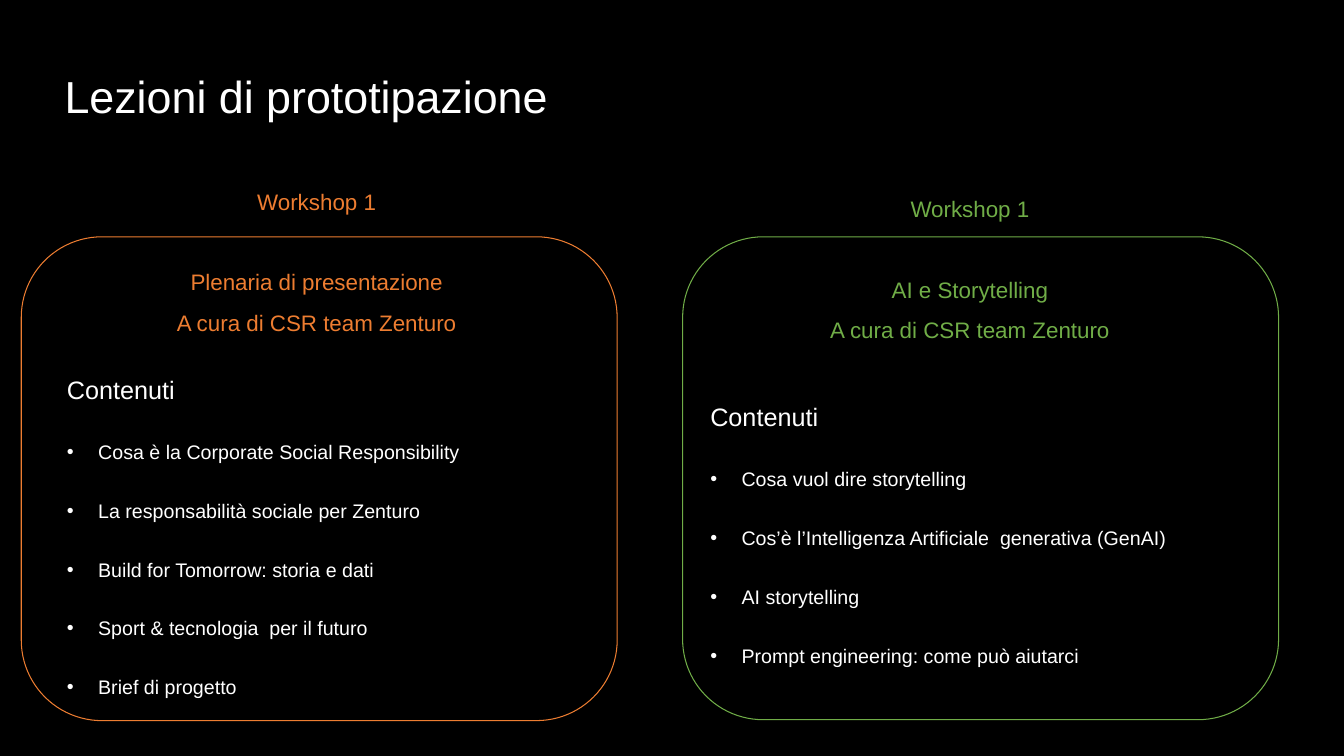
from dataclasses import dataclass

from lxml.etree import SubElement
from pptx import Presentation
from pptx.dml.color import RGBColor as RGB
from pptx.enum.shapes import MSO_SHAPE as Shp
from pptx.enum.text import MSO_ANCHOR as Anchor, MSO_AUTO_SIZE as Fit, PP_ALIGN as Al
from pptx.oxml.ns import qn
from pptx.util import Inches, Pt

BLACK = RGB(0x00, 0x00, 0x00)
WHITE = RGB(0xFF, 0xFF, 0xFF)
ORANGE = RGB(0xED, 0x7D, 0x31)
GREEN = RGB(0x70, 0xAD, 0x47)

WIDTH, HEIGHT = Inches(13.33), Inches(7.5)
FONT = "Arial"
HANGING = Inches(0.31)
HEADING = dict(alignment=Al.CENTER, line_spacing=Pt(28.8), space_before=Pt(0))
SUBHEAD = dict(HEADING, space_before=Pt(28.8))
LABEL = dict(alignment=Al.LEFT, line_spacing=Pt(32.4), space_before=Pt(0))
ITEM = dict(LABEL, line_spacing=Pt(42))
TITLE = dict(alignment=Al.LEFT, line_spacing=0.9, space_before=Pt(0))


@dataclass(frozen=True)
class Box:
    """A rectangle in percent of the slide's width and height."""
    x: float
    y: float
    w: float
    h: float


@dataclass(frozen=True)
class Workshop:
    """One framed column with its heading and contents."""
    color: RGB
    frame: Box
    head: Box
    body: Box
    topic: str
    items: tuple[str, ...]


WORKSHOPS = (
    Workshop(ORANGE, Box(1.58, 31.33, 44.34, 64), Box(9.53, 22.4, 28.06, 22.67),
             Box(4.23, 46.85, 39, 47), "Plenaria di presentazione",
             ("Cosa è la Corporate Social Responsibility",
              "La responsabilità sociale per Zenturo",
              "Build for Tomorrow: storia e dati",
              "Sport & tecnologia  per il futuro",
              "Brief di progetto")),
    Workshop(GREEN, Box(50.79, 31.33, 44.34, 63.87), Box(58.14, 23.37, 28.06, 22.67),
             Box(52.1, 50.47, 42, 43), "AI e Storytelling",
             ("Cosa vuol dire storytelling",
              "Cos’è l’Intelligenza Artificiale  generativa (GenAI)",
              "AI storytelling",
              "Prompt engineering: come può aiutarci")),
)


def place(box: Box) -> dict[str, int]:
    """Turn a box of percentages into slide lengths."""
    return dict(left=int(WIDTH * box.x / 100), top=int(HEIGHT * box.y / 100),
                width=int(WIDTH * box.w / 100), height=int(HEIGHT * box.h / 100))


def assign(obj, values: dict) -> None:
    """Set each named attribute of an object."""
    for name, value in values.items():
        setattr(obj, name, value)


def prepare(sp, box: Box, anchor=Anchor.TOP):
    """Move a placeholder and return its text frame."""
    assign(sp, place(box))
    tf = sp.text_frame
    assign(tf, dict(auto_size=Fit.NONE, word_wrap=True, vertical_anchor=anchor))
    return tf


def write(p, text: str, size: float, color: RGB, layout: dict) -> None:
    """Fill a paragraph with one formatted run."""
    assign(p, layout)
    r = p.add_run()
    r.text = text
    assign(r.font, dict(name=FONT, size=Pt(size), bold=False))
    r.font.color.rgb = color


def indent(p, bullet: bool) -> None:
    """Give a paragraph a hanging bullet or none at all."""
    pPr = p._p.get_or_add_pPr()
    pPr.set("marL", str(HANGING if bullet else 0))
    pPr.set("indent", str(-HANGING if bullet else 0))
    if not bullet:
        SubElement(pPr, qn("a:buNone"))


def draw_workshop(s, shop: Workshop, head, body) -> None:
    """Draw the frame and fill the heading and the list."""
    sp = s.shapes.add_shape(Shp.ROUNDED_RECTANGLE, **place(shop.frame))
    sp.shadow.inherit = False
    sp.fill.background()
    sp.line.color.rgb = shop.color
    sp.line.width = Pt(0.75)

    tf = prepare(head, shop.head)
    write(tf.paragraphs[0], "Workshop 1", 16, shop.color, HEADING)
    write(tf.add_paragraph(), shop.topic, 16, shop.color, SUBHEAD)
    write(tf.add_paragraph(), "A cura di CSR team Zenturo", 16, shop.color, HEADING)

    tf = prepare(body, shop.body)
    write(tf.paragraphs[0], "Contenuti", 18, WHITE, LABEL)
    indent(tf.paragraphs[0], False)
    for item in shop.items:
        p = tf.add_paragraph()
        write(p, item, 14, WHITE, ITEM)
        indent(p, True)


def main() -> None:
    """Build and save the slide."""
    prs = Presentation()
    assign(prs, dict(slide_width=WIDTH, slide_height=HEIGHT))
    s = prs.slides.add_slide(prs.slide_layouts.get_by_name("Comparison"))
    s.background.fill.solid()
    s.background.fill.fore_color.rgb = BLACK

    title, *columns = s.placeholders
    tf = prepare(title, Box(4.05, 8.27, 85.67, 8.67), Anchor.BOTTOM)
    write(tf.paragraphs[0], "Lezioni di prototipazione", 32, WHITE, TITLE)
    for shop, head, body in zip(WORKSHOPS, columns[::2], columns[1::2]):
        draw_workshop(s, shop, head, body)
    prs.save("out.pptx")


if __name__ == "__main__":
    main()
